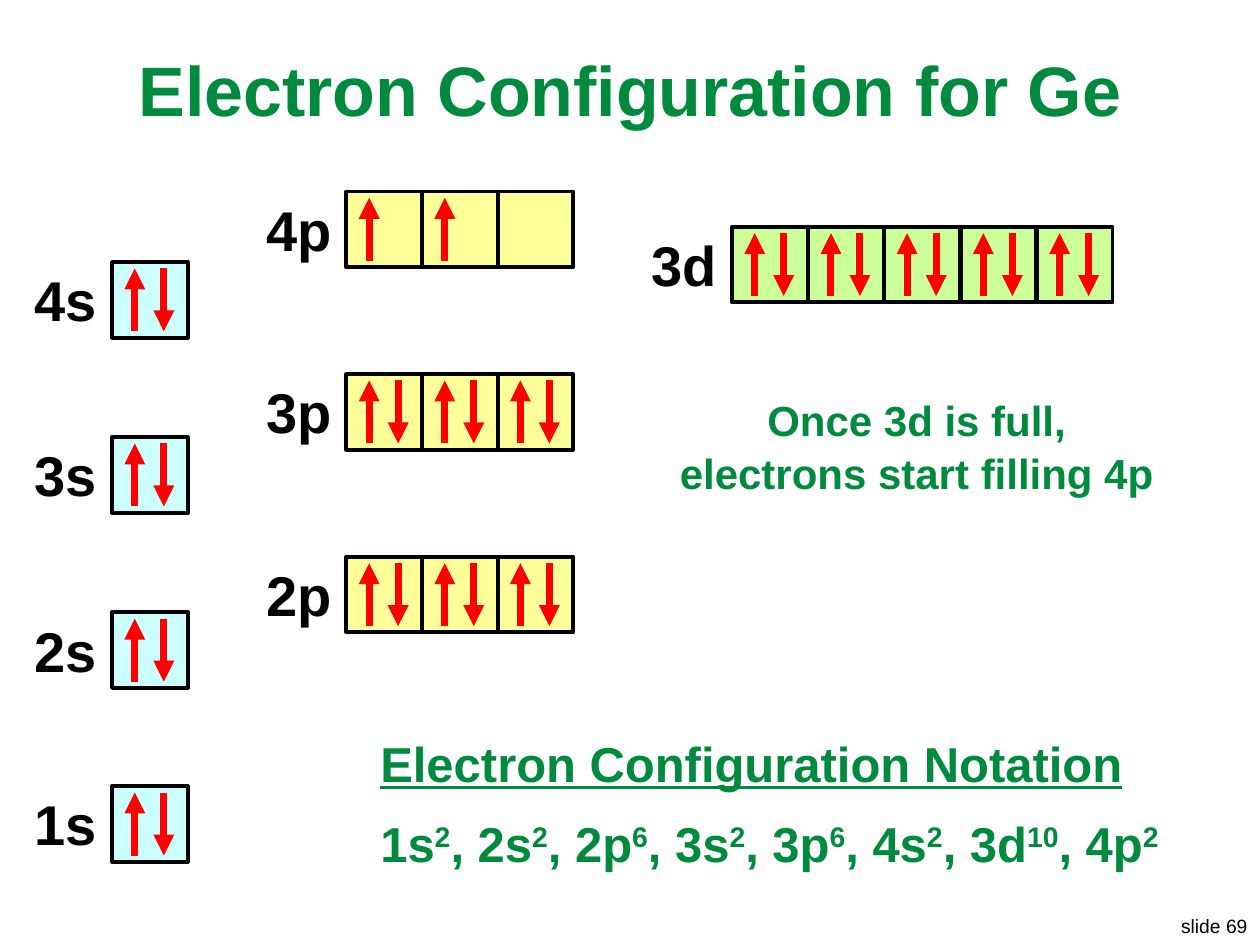
from lxml.etree import SubElement
from pptx import Presentation
from pptx.dml.color import RGBColor
from pptx.enum.shapes import MSO_CONNECTOR, MSO_SHAPE
from pptx.enum.text import MSO_ANCHOR, MSO_AUTO_SIZE, PP_ALIGN
from pptx.oxml.ns import qn
from pptx.util import Inches, Pt

COLORS = {
    "green": "008A3E", "black": "000000", "arrow": "FF0000",
    "s": "CCFFFF", "p": "FFFF99", "d": "CCFF99",
}
FONT = "Arial"
TITLE = "Electron Configuration for Ge"
REMARK = ["Once 3d is full,", "electrons start filling 4p"]
NOTATION_HEADING = "Electron Configuration Notation"
NOTATION = [("1s", 2), ("2s", 2), ("2p", 6), ("3s", 2),
            ("3p", 6), ("4s", 2), ("3d", 10), ("4p", 2)]
SLIDE_NUMBER = "slide 69"

BOX = 0.6
SUBSHELLS = {
    "s": {"left": 0.89, "pitch": BOX, "orbitals": 1, "label_width": 0.7},
    "p": {"left": 2.75, "pitch": BOX, "orbitals": 3, "label_width": 0.72},
    "d": {"left": 5.81, "pitch": 2.42 / 4, "orbitals": 5, "label_width": 0.72},
}
LEVEL_TOPS = {"2p": 4.42, "3p": 2.97, "4p": 1.52, "3d": 1.8,
              "1s": 6.24, "2s": 4.86, "3s": 3.47, "4s": 2.08}
LABEL_GAP = 0.02
LABEL_HEIGHT = 0.64
UP_OFFSET, DOWN_OFFSET = 0.18, 0.41
ARROW_MARGIN = 0.05


def color(name):
    return RGBColor.from_string(COLORS[name])


def add_run(paragraph, text, size, color_name, bold=True):
    run = paragraph.add_run()
    run.text = text
    run.font.name = FONT
    run.font.size = Pt(size)
    run.font.bold = bold
    run.font.color.rgb = color(color_name)
    return run


def place(shape, left, top, width, height):
    shape.left, shape.top = Inches(left), Inches(top)
    shape.width, shape.height = Inches(width), Inches(height)


def add_text_box(slide, left, top, width, height, wrap=False):
    box = slide.shapes.add_textbox(
        Inches(left), Inches(top), Inches(width), Inches(height))
    box.text_frame.word_wrap = wrap
    return box.text_frame


def add_right_text(slide, position, text, size, bold):
    paragraph = add_text_box(slide, *position).paragraphs[0]
    paragraph.alignment = PP_ALIGN.RIGHT
    add_run(paragraph, text, size, "black", bold)


def add_orbital(slide, left, top, fill):
    box = slide.shapes.add_shape(
        MSO_SHAPE.RECTANGLE, Inches(left), Inches(top), Inches(BOX), Inches(BOX))
    box.shadow.inherit = False
    box.fill.solid()
    box.fill.fore_color.rgb = color(fill)
    box.line.color.rgb = color("black")
    box.line.width = Pt(2.25)


def add_arrow(slide, x, start, end):
    arrow = slide.shapes.add_connector(
        MSO_CONNECTOR.STRAIGHT, Inches(x), Inches(start), Inches(x), Inches(end))
    arrow.line.color.rgb = color("arrow")
    arrow.line.width = Pt(4)
    SubElement(arrow.line._get_or_add_ln(), qn("a:tailEnd"), type="triangle")
    SubElement(arrow._element.spPr, qn("a:effectLst"))


def add_level(slide, name, electrons):
    kind = name[-1]
    subshell = SUBSHELLS[kind]
    top, left, count = LEVEL_TOPS[name], subshell["left"], subshell["orbitals"]
    width = subshell["label_width"]
    label = (left - LABEL_GAP - width, top - LABEL_GAP, width, LABEL_HEIGHT)
    add_right_text(slide, label, name, 32, True)
    lefts = [left + index * subshell["pitch"] for index in range(count)]
    for orbital_left in lefts:
        add_orbital(slide, orbital_left, top, kind)
    high, low = top + ARROW_MARGIN, top + BOX - ARROW_MARGIN
    for index, orbital_left in enumerate(lefts):
        if index < electrons:
            add_arrow(slide, orbital_left + UP_OFFSET, low, high)
        if index + count < electrons:
            add_arrow(slide, orbital_left + DOWN_OFFSET, high, low)


def add_title(slide):
    title = slide.shapes.title
    place(title, 0.2, 0.3, 9.6, 0.8)
    title.text_frame.vertical_anchor = MSO_ANCHOR.MIDDLE
    title.text_frame.auto_size = MSO_AUTO_SIZE.NONE
    paragraph = title.text_frame.paragraphs[0]
    paragraph.alignment = PP_ALIGN.CENTER
    add_run(paragraph, TITLE, 40, "green")


def add_remark(slide):
    body = slide.placeholders[1]
    place(body, 5.07, 3.06, 4.41, 1.06)
    body.text_frame.auto_size = MSO_AUTO_SIZE.NONE
    paragraph = body.text_frame.paragraphs[0]
    paragraph.alignment = PP_ALIGN.CENTER
    paragraph.space_before = Pt(12)
    paragraph.line_spacing = 1.05
    properties = paragraph._p.get_or_add_pPr()
    properties.set("marL", "0")
    properties.set("indent", "0")
    SubElement(properties, qn("a:buNone"))
    first, second = REMARK
    add_run(paragraph, first, 24, "green")
    paragraph.add_line_break()
    add_run(paragraph, second, 24, "green")


def add_notation(slide):
    frame = add_text_box(slide, 2.92, 5.77, 6.62, 1.21, wrap=True)
    heading = frame.paragraphs[0]
    heading.space_after = Pt(12)
    add_run(heading, NOTATION_HEADING, 28, "green").font.underline = True
    formula = frame.add_paragraph()
    for index, (name, electrons) in enumerate(NOTATION):
        add_run(formula, f", {name}" if index else name, 28, "green")
        exponent = add_run(formula, str(electrons), 28, "green")
        exponent.font._element.set("baseline", "30000")


def main():
    presentation = Presentation()
    presentation.slide_width = Inches(10)
    presentation.slide_height = Inches(7.5)
    slide = presentation.slides.add_slide(presentation.slide_layouts[1])
    add_title(slide)
    add_right_text(slide, (9.25, 7.21, 0.75, 0.29), SLIDE_NUMBER, 11, False)
    electrons = dict(NOTATION)
    for name in LEVEL_TOPS:
        add_level(slide, name, electrons[name])
    add_remark(slide)
    add_notation(slide)
    presentation.save("out.pptx")


if __name__ == "__main__":
    main()
